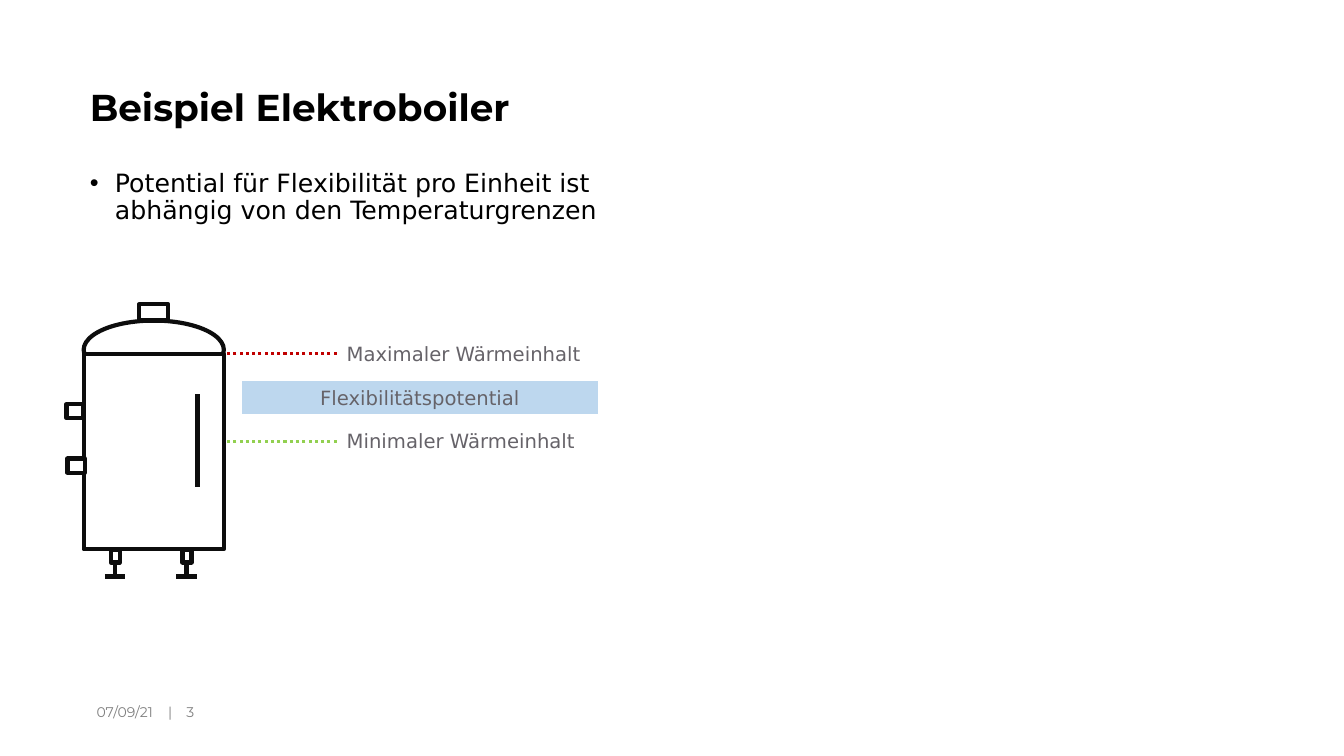
from dataclasses import dataclass

from lxml.etree import SubElement
from pptx import Presentation
from pptx.dml.color import RGBColor
from pptx.enum.dml import MSO_LINE
from pptx.enum.shapes import MSO_CONNECTOR, MSO_SHAPE
from pptx.enum.text import MSO_ANCHOR, MSO_AUTO_SIZE, PP_ALIGN
from pptx.oxml.ns import qn
from pptx.util import Emu, Pt


@dataclass(frozen=True)
class Theme:
    title_font: str = "Montserrat"
    body_font: str = "DejaVu Sans"
    black: str = "000000"
    white: str = "FFFFFF"
    outline: str = "0D0D0D"
    label: str = "666369"
    footer: str = "808080"
    band: str = "BDD7EE"
    maximum: str = "C00000"
    minimum: str = "92D050"
    title_size: float = 26.7
    body_size: int = 18
    label_size: int = 14
    footer_size: int = 10
    outline_width: int = 3
    level_width: float = 2.25


THEME = Theme()
PX = 9144  # 100 px to the inch

# Content: boxes are (left, top, width, height) in px
TITLE = "Beispiel Elektroboiler"
BULLET = "Potential für Flexibilität pro Einheit ist abhängig von den Temperaturgrenzen"
FOOTER = ("07/09/21", "|", "3")
FOOTER_TABS = (71, 89)
LEVELS = [
    ("Maximaler Wärmeinhalt", 351, THEME.maximum),
    ("Minimaler Wärmeinhalt", 438, THEME.minimum),
]
LEVEL_LEFT, LABEL_LEFT, LABEL_RIGHT, LABEL_HEIGHT = 221, 334, 594, 34
BAND = ("Flexibilitätspotential", (239, 378, 355, 33))

BOILER_PARTS = [
    (MSO_SHAPE.OVAL, (83, 318, 139, 58)),  # dome
    (MSO_SHAPE.RECTANGLE, (83, 351, 139, 194)),  # tank
    (MSO_SHAPE.RECTANGLE, (138, 302, 29, 16)),  # top valve
    (MSO_SHAPE.RECTANGLE, (66, 401, 17, 14)),  # upper pipe
    (MSO_SHAPE.RECTANGLE, (67, 455, 17, 14)),  # lower pipe
]
GAUGE = (196, 391, 196, 483)
FOOT_CENTRES = (114, 185)
FOOT_TOP, FOOT_HEIGHT, FOOT_BASE = 546, 12, 572

presentation = Presentation()
presentation.slide_width, presentation.slide_height = Emu(1333 * PX), Emu(750 * PX)
slide = presentation.slides.add_slide(presentation.slide_layouts[1])


def colour(value):
    return RGBColor.from_string(value)


def place(shape, box):
    shape.left, shape.top, shape.width, shape.height = (Emu(n * PX) for n in box)


def set_margins(text_frame, side, vertical):
    text_frame.margin_left = text_frame.margin_right = Emu(side * PX)
    text_frame.margin_top = text_frame.margin_bottom = Emu(vertical * PX)


def write(shape, text, font, size, text_colour, align=PP_ALIGN.LEFT,
          anchor=MSO_ANCHOR.TOP, bold=False):
    text_frame = shape.text_frame
    text_frame.word_wrap = True
    text_frame.auto_size = MSO_AUTO_SIZE.NONE
    text_frame.vertical_anchor = anchor
    paragraph = text_frame.paragraphs[0]
    paragraph.text = text
    paragraph.alignment = align
    paragraph.space_before = Pt(0)
    for run in paragraph.runs:
        run.font.name, run.font.size, run.font.bold = font, Pt(size), bold
        run.font.color.rgb = colour(text_colour)
    return paragraph


def add_text_box(box):
    return slide.shapes.add_textbox(*(Emu(n * PX) for n in box))


def add_part(kind, box, fill=THEME.white, line=THEME.outline, width=THEME.outline_width):
    shape = slide.shapes.add_shape(kind, *(Emu(n * PX) for n in box))
    shape.shadow.inherit = False
    shape.fill.solid()
    shape.fill.fore_color.rgb = colour(fill)
    shape.line.color.rgb = colour(line)
    shape.line.width = Pt(width)
    return shape


def add_line(ends, line=THEME.outline, width=THEME.outline_width):
    connector = slide.shapes.add_connector(
        MSO_CONNECTOR.STRAIGHT, *(Emu(n * PX) for n in ends))
    connector.line.color.rgb = colour(line)
    connector.line.width = Pt(width)
    SubElement(connector._element.spPr, qn("a:effectLst"))
    return connector


# Title and bullet
title, body = slide.shapes.title, slide.placeholders[1]
place(title, (82, 77, 1173, 64))
set_margins(title.text_frame, 7, 4)
write(title, TITLE, THEME.title_font, THEME.title_size, THEME.black,
      anchor=MSO_ANCHOR.MIDDLE, bold=True).line_spacing = 0.9

place(body, (82, 165, 585, 103))
set_margins(body.text_frame, 7, 4)
paragraph = write(body, BULLET, THEME.body_font, THEME.body_size, THEME.black)
paragraph.line_spacing = 0.9
properties = paragraph._p.get_or_add_pPr()
properties.set("marL", str(25 * PX))
properties.set("indent", str(-25 * PX))
SubElement(properties, qn("a:buFont"), typeface="Arial")
SubElement(properties, qn("a:buChar"), char="•")

# Heat levels with their labels
for text, y, level_colour in LEVELS:
    level = add_line((LABEL_LEFT, y, LEVEL_LEFT, y), level_colour, THEME.level_width)
    level.line.dash_style = MSO_LINE.ROUND_DOT
    label = add_text_box((LABEL_LEFT, y - LABEL_HEIGHT // 2,
                          LABEL_RIGHT - LABEL_LEFT, LABEL_HEIGHT))
    write(label, text, THEME.body_font, THEME.label_size, THEME.label)

# Boiler
for kind, box in BOILER_PARTS:
    add_part(kind, box)
add_line(GAUGE)
for x in FOOT_CENTRES:
    add_part(MSO_SHAPE.RECTANGLE, (x - 4, FOOT_TOP, 9, FOOT_HEIGHT))
    add_line((x, FOOT_TOP + FOOT_HEIGHT, x, FOOT_BASE))
    add_line((x - 10, FOOT_BASE, x + 10, FOOT_BASE))

# Flexibility band
band_text, band_box = BAND
band = add_part(MSO_SHAPE.RECTANGLE, band_box, THEME.band, THEME.white, 0.75)
write(band, band_text, THEME.body_font, THEME.label_size, THEME.label,
      PP_ALIGN.CENTER, MSO_ANCHOR.MIDDLE)

# Footer
footer = add_text_box((86, 695, 417, 23))
set_margins(footer.text_frame, 10, 0)
paragraph = write(footer, "\t".join(FOOTER), THEME.title_font, THEME.footer_size,
                  THEME.footer, anchor=MSO_ANCHOR.MIDDLE)
tabs = SubElement(paragraph._p.get_or_add_pPr(), qn("a:tabLst"))
for position in FOOTER_TABS:
    SubElement(tabs, qn("a:tab"), pos=str(position * PX), algn="l")

presentation.save("out.pptx")
